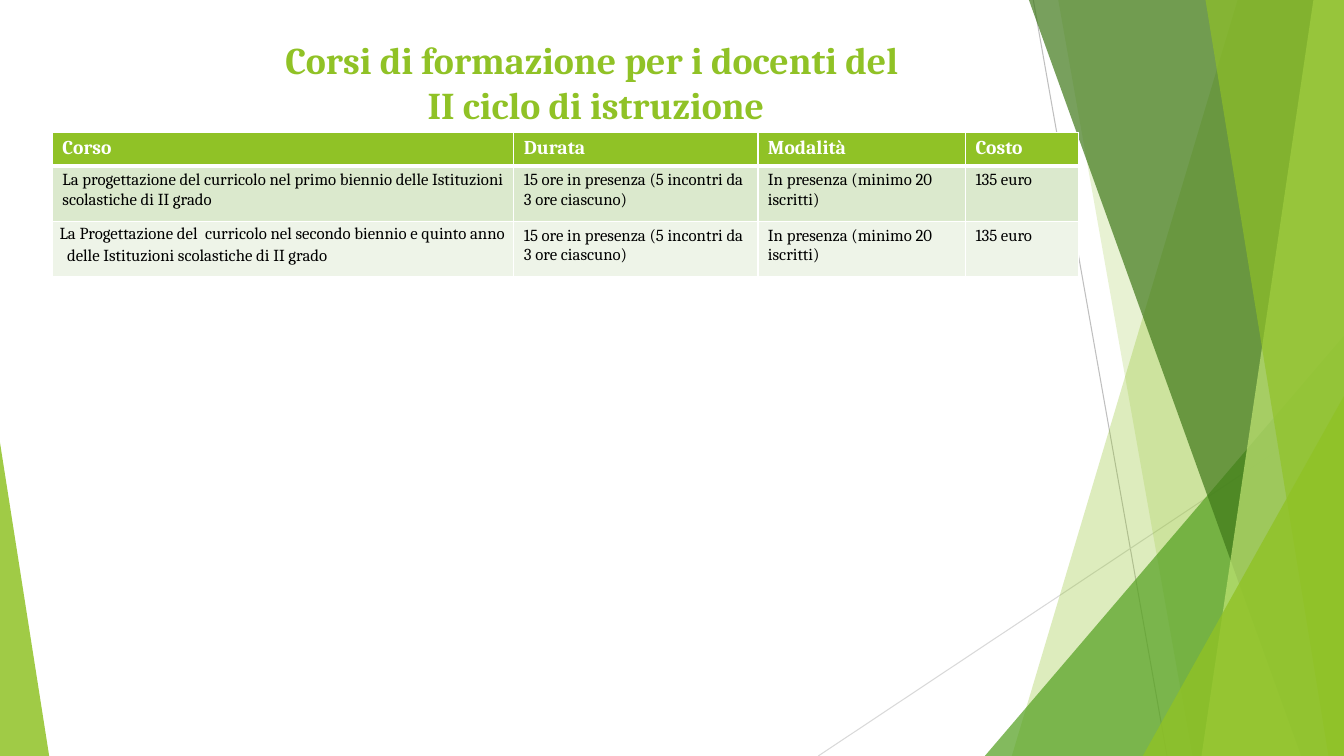
from dataclasses import dataclass

from lxml import etree
from pptx import Presentation
from pptx import util as u
from pptx.dml.color import RGBColor
from pptx.enum import shapes, text
from pptx.oxml import ns


@dataclass(frozen=True)
class Theme:
    """Colours, font and type sizes of the slide."""
    font: str = "Cambria"
    lime: str = "90C226"
    pale_lime: str = "C0E474"
    green: str = "54A021"
    dark_green: str = "3F7819"
    grey: str = "BFBFBF"
    light_grey: str = "D9D9D9"
    white: str = "FFFFFF"
    black: str = "000000"
    row_fills: tuple = ("DBE9CD", "EEF4E8")
    title_size: int = 27
    header_size: int = 14
    body_size: int = 12


WIDTH, HEIGHT = 33.87, 19.05


class SlideBuilder:
    """Draws styled elements on the current slide; lengths are in cm."""

    def __init__(self, slide, theme):
        """Keep the slide and its theme."""
        self.slide = slide
        self.theme = theme

    def line(self, x1, y1, x2, y2, color):
        """Draw a thin straight line."""
        ends = [u.Cm(v) for v in (x1, y1, x2, y2)]
        c = self.slide.shapes.add_connector(shapes.MSO_CONNECTOR.STRAIGHT, *ends)
        c.line.color.rgb = RGBColor.from_string(color)
        c.line.width = u.Pt(0.75)
        etree.SubElement(c._element.spPr, ns.qn("a:effectLst"))

    def paint(self, sp, color, opacity):
        """Fill a shape with a translucent colour and no outline."""
        sp.shadow.inherit = False
        sp.line.fill.background()
        sp.fill.solid()
        sp.fill.fore_color.rgb = RGBColor.from_string(color)
        clr = sp._element.spPr.find(".//" + ns.qn("a:srgbClr"))
        etree.SubElement(clr, ns.qn("a:alpha"), val=str(opacity * 1000))

    def band(self, top_x, bottom_x, color, opacity):
        """Draw a slanted band reaching the right edge of the slide."""
        points = [(top_x, 0), (WIDTH, 0), (WIDTH, HEIGHT), (bottom_x, HEIGHT)]
        points = [(u.Cm(x), u.Cm(y)) for x, y in points]
        fb = self.slide.shapes.build_freeform(*points[0])
        fb.add_line_segments(points[1:], close=True)
        self.paint(fb.convert_to_shape(), color, opacity)

    def corner(self, width, height, color, opacity, right=True):
        """Draw a right triangle in a bottom corner of the slide."""
        left = WIDTH - width if right else 0
        box = [u.Cm(v) for v in (left, HEIGHT - height, width, height)]
        sp = self.slide.shapes.add_shape(shapes.MSO_SHAPE.ISOSCELES_TRIANGLE, *box)
        sp.adjustments[0] = 1 if right else 0
        self.paint(sp, color, opacity)

    def style(self, p, size, color, bold=False):
        """Set the font of a paragraph."""
        p.font.name = self.theme.font
        p.font.size = u.Pt(size)
        p.font.bold = bold
        p.font.color.rgb = RGBColor.from_string(color)

    def title(self, x, y, w, h, words):
        """Add the centred title."""
        tf = self.slide.shapes.add_textbox(*[u.Cm(v) for v in (x, y, w, h)]).text_frame
        tf.word_wrap = True
        tf.vertical_anchor = text.MSO_ANCHOR.TOP
        p = tf.paragraphs[0]
        p.text = words
        p.alignment = text.PP_ALIGN.CENTER
        self.style(p, self.theme.title_size, self.theme.lime, True)

    def borders(self, cell, top, bottom):
        """Give a cell white borders, with the top and bottom widths in points."""
        tc_pr = cell._tc.get_or_add_tcPr()
        for i, (side, pt) in enumerate(zip("LRTB", (1, 1, top, bottom))):
            ln = etree.Element(ns.qn("a:ln" + side), w=str(u.Pt(pt)))
            fill = etree.SubElement(ln, ns.qn("a:solidFill"))
            etree.SubElement(fill, ns.qn("a:srgbClr"), val=self.theme.white)
            tc_pr.insert(i, ln)

    def table(self, x, y, widths, heights, rows):
        """Add a table whose first row is the header."""
        th = self.theme
        box = [u.Cm(v) for v in (x, y, sum(widths), sum(heights))]
        table = self.slide.shapes.add_table(len(rows), len(widths), *box).table
        for column, width in zip(table.columns, widths):
            column.width = u.Cm(width)
        for i, (height, row) in enumerate(zip(heights, rows)):
            table.rows[i].height = u.Cm(height)
            header = i == 0
            fill = th.lime if header else th.row_fills[(i - 1) % 2]
            for j, words in enumerate(row):
                cell = table.cell(i, j)
                cell.fill.solid()
                cell.fill.fore_color.rgb = RGBColor.from_string(fill)
                self.borders(cell, 3 if i == 1 else 1, 3 if header else 1)
                p = cell.text_frame.paragraphs[0]
                p.text = words
                if header:
                    self.style(p, th.header_size, th.white, True)
                else:
                    self.style(p, th.body_size, th.black)
        return table

    def loosen(self, cell):
        """Give a cell narrow margins, open lines and a hanging indent."""
        cell.margin_left = cell.margin_right = u.Cm(0.18)
        cell.margin_top = cell.margin_bottom = 0
        p = cell.text_frame.paragraphs[0]
        p.line_spacing = 1.15
        p.space_after = u.Pt(10)
        p_pr = p._p.get_or_add_pPr()
        p_pr.set("marL", str(u.Cm(0.19)))
        p_pr.set("indent", str(u.Cm(-0.19)))


def main():
    """Build and save the slide."""
    prs = Presentation()
    prs.slide_width, prs.slide_height = u.Cm(WIDTH), u.Cm(HEIGHT)
    th = Theme()
    s = SlideBuilder(prs.slides.add_slide(prs.slide_layouts[6]), th)

    s.line(26.04, 0, 29.41, HEIGHT, th.grey)
    s.line(WIDTH, 10.24, 20.62, HEIGHT, th.light_grey)
    s.band(31.19, 25.5, th.lime, 30)
    s.band(26.67, 30.05, th.lime, 20)
    s.corner(9.05, 10.59, th.green, 72)
    s.band(25.93, 32.79, th.dark_green, 70)
    s.band(33.1, 30.28, th.pale_lime, 70)
    s.band(30.38, 33.48, th.lime, 65)
    s.corner(5.07, 9.07, th.lime, 80)
    s.corner(1.24, 7.9, th.lime, 85, right=False)

    s.title(3.38, 0.79, 23.27, 3.18,
            "Corsi di formazione per i docenti del \vII ciclo di istruzione")
    terms = ("15 ore in presenza (5 incontri da 3 ore ciascuno)",
             "In presenza (minimo 20 iscritti)", "135 euro")
    courses = ("La progettazione del curricolo nel primo biennio delle "
               "Istituzioni scolastiche di II grado",
               "La Progettazione del  curricolo nel secondo biennio e quinto anno "
               "delle Istituzioni scolastiche di II grado")
    rows = [("Corso", "Durata", "Modalità", "Costo")]
    rows += [(course, *terms) for course in courses]
    table = s.table(1.32, 3.33, (11.63, 6.15, 5.23, 2.84), (0.84, 1.4, 1.4), rows)
    s.loosen(table.cell(2, 0))
    prs.save("out.pptx")


if __name__ == "__main__":
    main()
